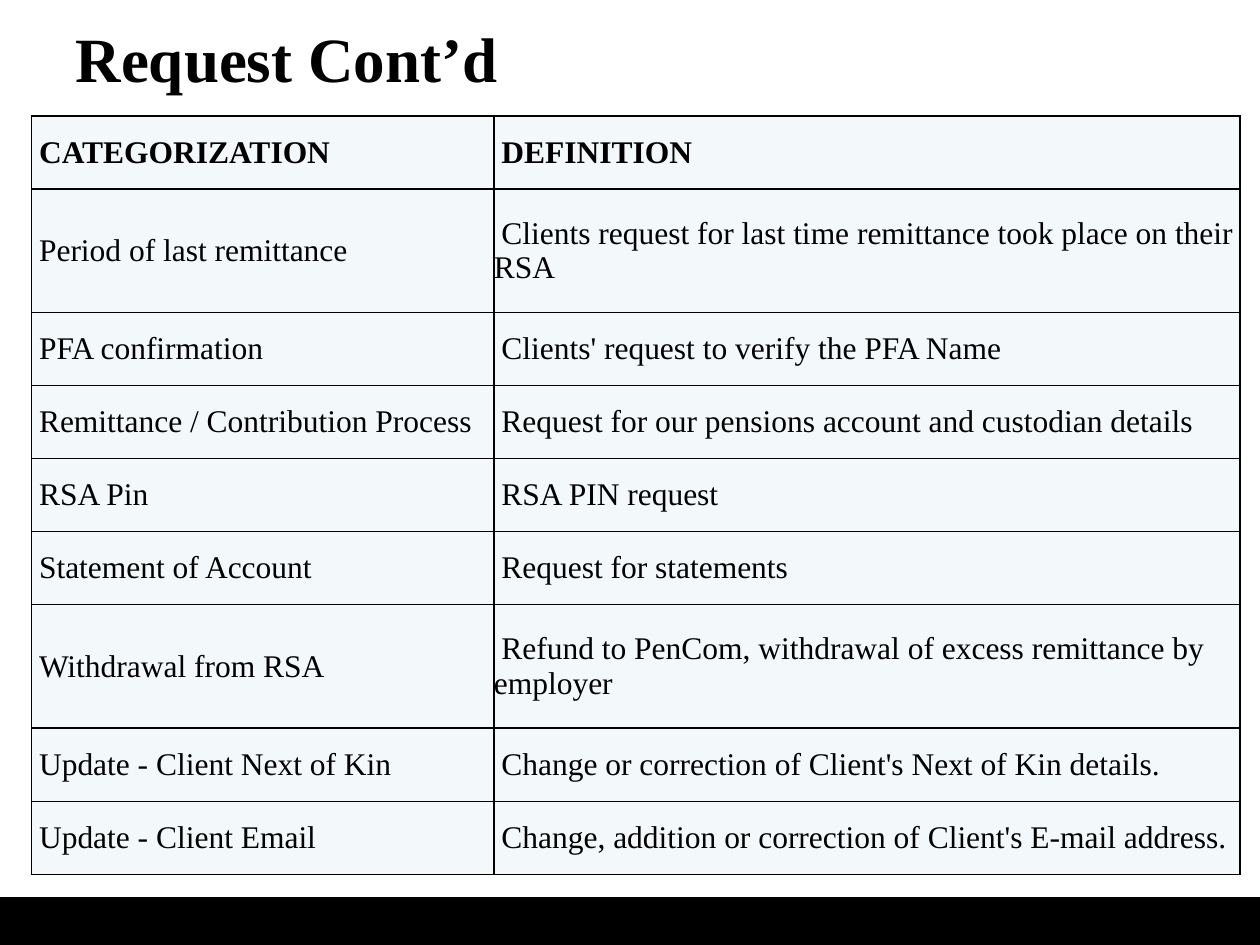
import dataclasses

import pptx
import pptx.dml.color
import pptx.enum.shapes
import pptx.enum.text
import pptx.oxml
import pptx.oxml.ns
import pptx.util

Inches = pptx.util.Inches
Pt = pptx.util.Pt
RGBColor = pptx.dml.color.RGBColor
MIDDLE = pptx.enum.text.MSO_ANCHOR.MIDDLE

BLACK = RGBColor(0x00, 0x00, 0x00)
PALE = RGBColor(0xF3, 0xF9, 0xFA)
FONT = "Times New Roman"
FIRST_LINE_INDENT = Inches(0.06)
COLUMN_WIDTHS = (3.67, 5.92)


@dataclasses.dataclass
class RequestRow:
    category: str
    definition: str
    height: float = 0.58
    bold: bool = False


REQUESTS = [
    RequestRow("CATEGORIZATION", "DEFINITION", bold=True),
    RequestRow("Period of last remittance",
               "Clients request for last time remittance took place on their RSA", 0.98),
    RequestRow("PFA confirmation", "Clients' request to verify the PFA Name"),
    RequestRow("Remittance / Contribution Process",
               "Request for our pensions account and custodian details"),
    RequestRow("RSA Pin", "RSA PIN request"),
    RequestRow("Statement of Account", "Request for statements"),
    RequestRow("Withdrawal from RSA",
               "Refund to PenCom, withdrawal of excess remittance by employer", 0.98),
    RequestRow("Update - Client Next of Kin",
               "Change or correction of Client's Next of Kin details."),
    RequestRow("Update - Client Email",
               "Change, addition or correction of Client's E-mail address."),
]


def set_font(paragraph, size: float, bold: bool) -> None:
    font = paragraph.runs[0].font
    for name, value in {"name": FONT, "size": Pt(size), "bold": bold}.items():
        setattr(font, name, value)
    font.color.rgb = BLACK


def add_borders(cell) -> None:
    properties = cell._tc.get_or_add_tcPr()
    for side in "LRTB":
        properties.append(pptx.oxml.parse_xml(
            f'<a:ln{side} {pptx.oxml.ns.nsdecls("a")} w="{Pt(1)}">'
            f'<a:solidFill><a:srgbClr val="{BLACK}"/></a:solidFill></a:ln{side}>'))


def fill_cell(cell, text: str, bold: bool) -> None:
    add_borders(cell)
    cell.fill.solid()
    cell.fill.fore_color.rgb = PALE
    cell.vertical_anchor = MIDDLE
    for side in ("left", "right", "top", "bottom"):
        setattr(cell, f"margin_{side}", 0)
    cell.text = text
    paragraph = cell.text_frame.paragraphs[0]
    paragraph._p.get_or_add_pPr().set("indent", str(FIRST_LINE_INDENT))
    set_font(paragraph, 18, bold)


def add_request_table(slide, rows: list[RequestRow]) -> None:
    table = slide.shapes.add_table(
        len(rows), len(COLUMN_WIDTHS), Inches(0.25), Inches(0.92),
        Inches(sum(COLUMN_WIDTHS)), Inches(sum(row.height for row in rows))).table
    for column, width in zip(table.columns, COLUMN_WIDTHS):
        column.width = Inches(width)
    for index, row in enumerate(rows):
        table.rows[index].height = Inches(row.height)
        for column, text in enumerate((row.category, row.definition)):
            fill_cell(table.cell(index, column), text, row.bold)


def main() -> None:
    deck = pptx.Presentation()
    deck.slide_width, deck.slide_height = Inches(10), Inches(7.5)
    slide = deck.slides.add_slide(deck.slide_layouts[5])

    # Footer band
    band = slide.shapes.add_shape(pptx.enum.shapes.MSO_SHAPE.RECTANGLE,
                                  0, Inches(7.12), Inches(10), Inches(0.38))
    band.shadow.inherit = False
    band.fill.solid()
    band.fill.fore_color.rgb = BLACK
    band.line.fill.background()

    # Title
    title = slide.shapes.title
    place = {"left": 0.5, "top": 0.08, "width": 9, "height": 0.75}
    for name, value in place.items():
        setattr(title, name, Inches(value))
    title.text_frame.text = "Request Cont’d"
    title.text_frame.vertical_anchor = MIDDLE
    heading = title.text_frame.paragraphs[0]
    heading.alignment = pptx.enum.text.PP_ALIGN.LEFT
    set_font(heading, 36, True)

    # Request categories
    add_request_table(slide, REQUESTS)

    deck.save("out.pptx")


if __name__ == "__main__":
    main()
